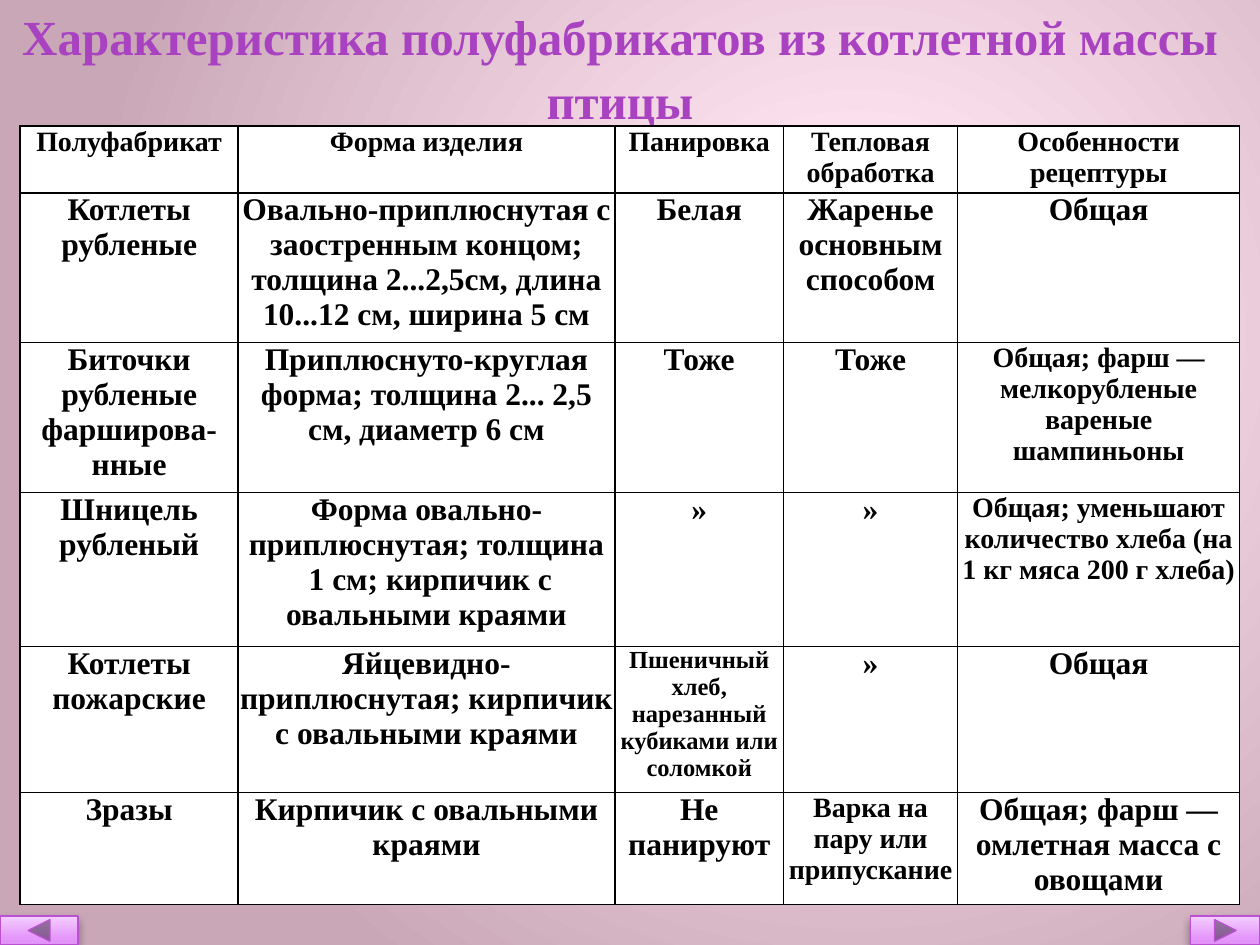
from pptx import Presentation
from pptx.dml.color import RGBColor
from pptx.enum.shapes import MSO_SHAPE as Preset
from pptx.enum.text import MSO_ANCHOR as Anchor, MSO_AUTO_SIZE as AutoSize, PP_ALIGN as Align
from pptx.oxml import parse_xml
from pptx.oxml.ns import nsdecls
from pptx.util import Inches, Pt

FONT = "Times New Roman"


def paint(fill, colour):
    fill.solid()
    fill.fore_color.rgb = RGBColor.from_string(colour)


def gradient(stops, direction):
    marks = "".join(f'<a:gs pos="{share * 1000}"><a:srgbClr val="{colour}"/></a:gs>'
                    for share, colour in stops)
    return parse_xml(f'<a:gradFill {nsdecls("a")} rotWithShape="1">'
                     f'<a:gsLst>{marks}</a:gsLst>{direction}</a:gradFill>')


deck = Presentation()
deck.slide_width, deck.slide_height = Inches(10), Inches(7.5)
page = deck.slides.add_slide(deck.slide_layouts[5])

# Background: a round glow
paint(page.background.fill, "FFE5F1")
backdrop = page.element.xpath("//p:bgPr")[0]
backdrop.replace(backdrop[0], gradient(
    [(0, "FFE5F1"), (20, "FFE3F0"), (100, "C9A7B7")],
    '<a:path path="circle"><a:fillToRect l="68000" t="35000" r="32000" b="65000"/></a:path>'))

# Title
title = page.shapes.title
title.left, title.top, title.width, title.height = 0, 0, Inches(9.84), Inches(1.51)
frame = title.text_frame
frame.word_wrap = True
frame.auto_size = AutoSize.NONE
frame.vertical_anchor = Anchor.MIDDLE
frame.margin_top, frame.margin_bottom = Inches(0.05), Inches(0.52)
para = frame.paragraphs[0]
para.alignment = Align.CENTER
para.line_spacing = 1.09
span = para.add_run()
span.text = "Характеристика полуфабрикатов из котлетной массы птицы"
span.font.name, span.font.size, span.font.bold = FONT, Pt(28), True
paint(span.font.fill, "A942C1")

# Table: one paragraph for each line of a cell
columns = [1.73, 2.99, 1.34, 1.38, 2.24]
rows = [0.53, 1.19, 1.19, 1.22, 1.16, 0.89]
texts = [
    ["Полуфабрикат", "Форма изделия", "Панировка", "Тепловая обработка",
     "Особенности рецептуры"],
    ["Котлеты рубленые",
     "Овально-приплюснутая с заостренным концом; толщина 2...2,5см, "
     "длина 10...12 см, ширина 5 см",
     "Белая", "Жаренье\nосновным\nспособом", "Общая"],
    ["Биточки рубленые фарширова-нные",
     "Приплюснуто-круглая форма; толщина 2... 2,5 см, диаметр 6 см",
     "Тоже", "Тоже", "Общая; фарш — мелкорубленые вареные шампиньоны"],
    ["Шницель рубленый",
     "Форма овально-приплюснутая; толщина\n 1 см; кирпичик с овальными краями",
     "»", "»", "Общая; уменьшают количество хлеба (на 1 кг мяса 200 г хлеба)"],
    ["Котлеты пожарские", "Яйцевидно-приплюснутая; кирпичик с овальными краями",
     "Пшеничный хлеб, нарезанный кубиками или соломкой", "»", "Общая"],
    ["Зразы", "Кирпичик с овальными краями", "Не панируют",
     "Варка на пару или припускание", "Общая; фарш — омлетная масса с овощами"],
]
small_sizes = {(2, 4): 16, (3, 4): 16, (4, 2): 14, (5, 3): 16}

table = page.shapes.add_table(len(rows), len(columns), Inches(0.16), Inches(1),
                              Inches(sum(columns)), Inches(sum(rows))).table
table.first_row = table.horz_banding = False
for column, width in zip(table.columns, columns):
    column.width = Inches(width)
for r, (row, height) in enumerate(zip(table.rows, rows)):
    row.height = Inches(height)
    for c, cell in enumerate(row.cells):
        cell.margin_left = cell.margin_right = Inches(0.01)
        cell.margin_top = cell.margin_bottom = 0
        paint(cell.fill, "FFFFFF")
        borders = cell.fill._xPr
        for i, side in enumerate("LRTB"):
            borders.insert(i, parse_xml(
                f'<a:ln{side} {nsdecls("a")} w="12700"><a:solidFill>'
                f'<a:srgbClr val="000000"/></a:solidFill></a:ln{side}>'))
        size = small_sizes.get((r, c), 18 if r else 16)
        for i, line in enumerate(texts[r][c].split("\n")):
            para = cell.text_frame.add_paragraph() if i else cell.text_frame.paragraphs[0]
            para.alignment = Align.CENTER
            span = para.add_run()
            span.text = line
            span.font.name, span.font.size, span.font.bold = FONT, Pt(size), True
            paint(span.font.fill, "000000")

# Navigation buttons in the bottom corners
for preset, left, width in [(Preset.ACTION_BUTTON_BACK_OR_PREVIOUS, 0, 0.62),
                            (Preset.ACTION_BUTTON_FORWARD_OR_NEXT, 9.45, 0.55)]:
    button = page.shapes.add_shape(preset, Inches(left), Inches(7.27),
                                   Inches(width), Inches(0.23))
    paint(button.fill, "E597FB")
    paint(button.line.fill, "BA51D0")
    button.line.width = Pt(0.75)
    look = button.element.spPr
    look.replace(look.xpath("./a:solidFill")[0], gradient(
        [(0, "E091F6"), (25, "E597FB"), (100, "F4CFFF")], '<a:lin ang="16200000"/>'))
    look.append(parse_xml(
        f'<a:effectLst {nsdecls("a")}><a:outerShdw blurRad="66000" dist="38100" dir="5400000"'
        ' rotWithShape="0"><a:srgbClr val="000000"><a:alpha val="40000"/></a:srgbClr>'
        '</a:outerShdw></a:effectLst>'))

deck.save("out.pptx")
